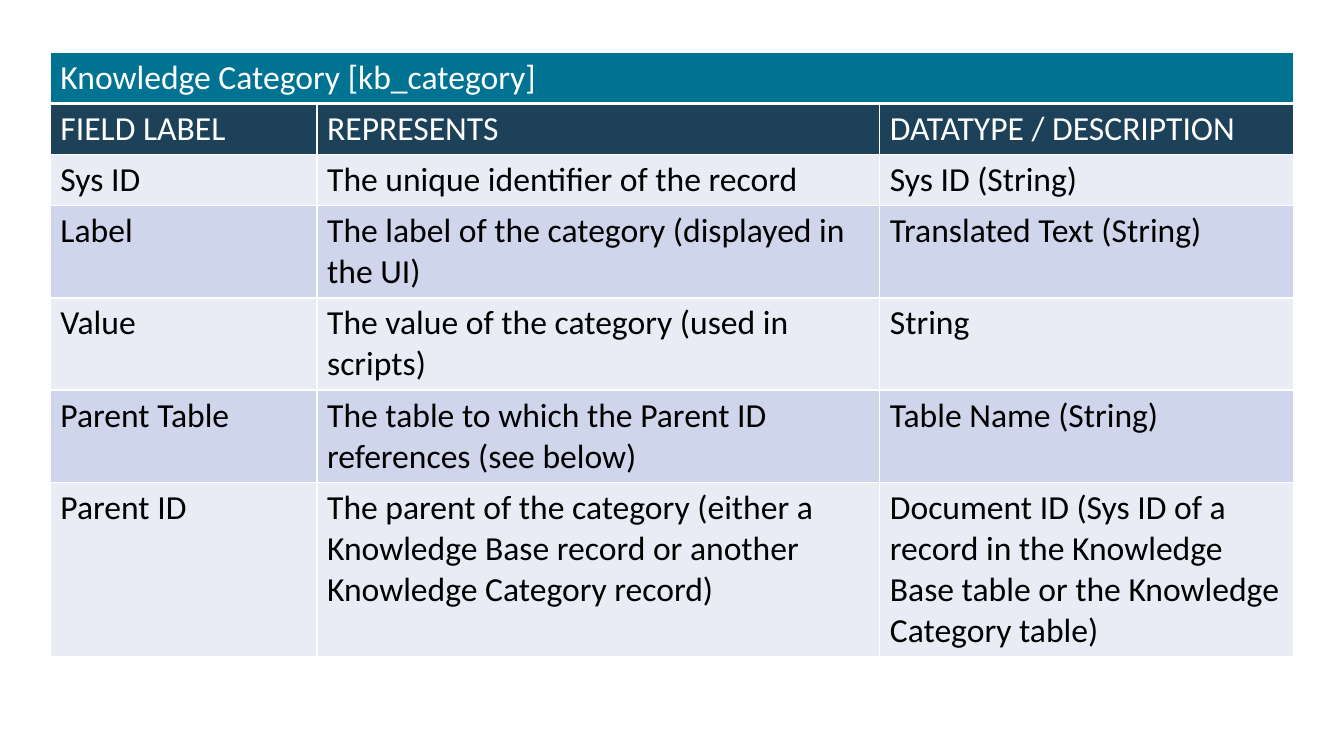
from lxml import etree
from pptx import Presentation
from pptx.dml.color import RGBColor
from pptx.oxml.ns import qn
from pptx.util import Pt

PX = 9525  # EMU per px, 96 px to the inch
WHITE = RGBColor(0xFF, 0xFF, 0xFF)
BLACK = RGBColor(0x00, 0x00, 0x00)
TEAL = RGBColor(0x00, 0x73, 0x93)
NAVY = RGBColor(0x1C, 0x41, 0x59)
PALE = RGBColor(0xE9, 0xEB, 0xF5)
LAVENDER = RGBColor(0xCF, 0xD5, 0xEA)

COL_WIDTHS = [254, 536, 394]
ROW_HEIGHT = 44
ROWS = [
    ["Knowledge Category [kb_category]", "", ""],
    ["FIELD LABEL", "REPRESENTS", "DATATYPE / DESCRIPTION"],
    ["Sys ID", "The unique identifier of the record", "Sys ID (String)"],
    ["Label", "The label of the category (displayed in the UI)",
     "Translated Text (String)"],
    ["Value", "The value of the category (used in scripts)", "String"],
    ["Parent Table", "The table to which the Parent ID references (see below)",
     "Table Name (String)"],
    ["Parent ID",
     "The parent of the category (either a Knowledge Base record "
     "or another Knowledge Category record)",
     "Document ID (Sys ID of a record in the Knowledge Base table "
     "or the Knowledge Category table)"],
]


def set_borders(cell, widths):
    """Draw white borders; widths maps each side (L, R, T, B) to points."""
    tcPr = cell._tc.get_or_add_tcPr()
    for side, width in widths.items():
        ln = etree.SubElement(tcPr, qn(f"a:ln{side}"), w=str(Pt(width)))
        fill = etree.SubElement(ln, qn("a:solidFill"))
        etree.SubElement(fill, qn("a:srgbClr"), val=str(WHITE))


prs = Presentation()
prs.slide_width, prs.slide_height = 1280 * PX, 720 * PX
s = prs.slides.add_slide(prs.slide_layouts[6])

frame = s.shapes.add_table(len(ROWS), len(COL_WIDTHS), 48 * PX, 50 * PX,
                           sum(COL_WIDTHS) * PX, len(ROWS) * ROW_HEIGHT * PX)
table = frame.table
for column, width in zip(table.columns, COL_WIDTHS):
    column.width = width * PX
table.cell(0, 0).merge(table.cell(0, len(COL_WIDTHS) - 1))

for i, row in enumerate(ROWS):
    if i < 2:
        fill, color = (TEAL, NAVY)[i], WHITE
    else:
        fill, color = (PALE, LAVENDER)[i % 2], BLACK
    borders = {"L": 1, "R": 1, "T": 3 if i == 1 else 1, "B": 3 if i == 0 else 1}
    for j, text in enumerate(row):
        cell = table.cell(i, j)
        set_borders(cell, borders)
        cell.fill.solid()
        cell.fill.fore_color.rgb = fill
        if text:
            r = cell.text_frame.paragraphs[0].add_run()
            r.text = text
            for name, value in {"size": Pt(24), "name": "Calibri", "bold": False}.items():
                setattr(r.font, name, value)
            r.font.color.rgb = color

prs.save("out.pptx")
